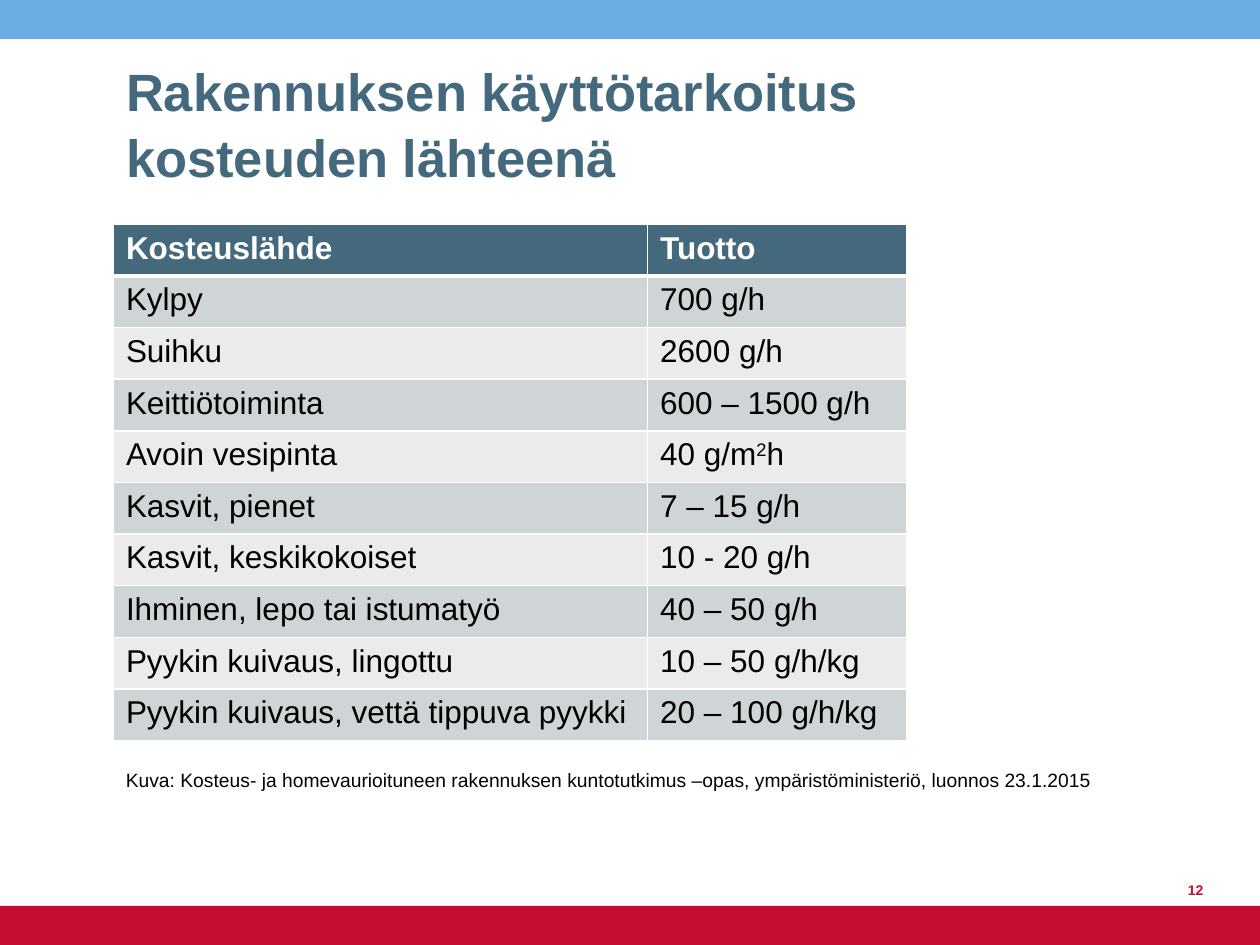
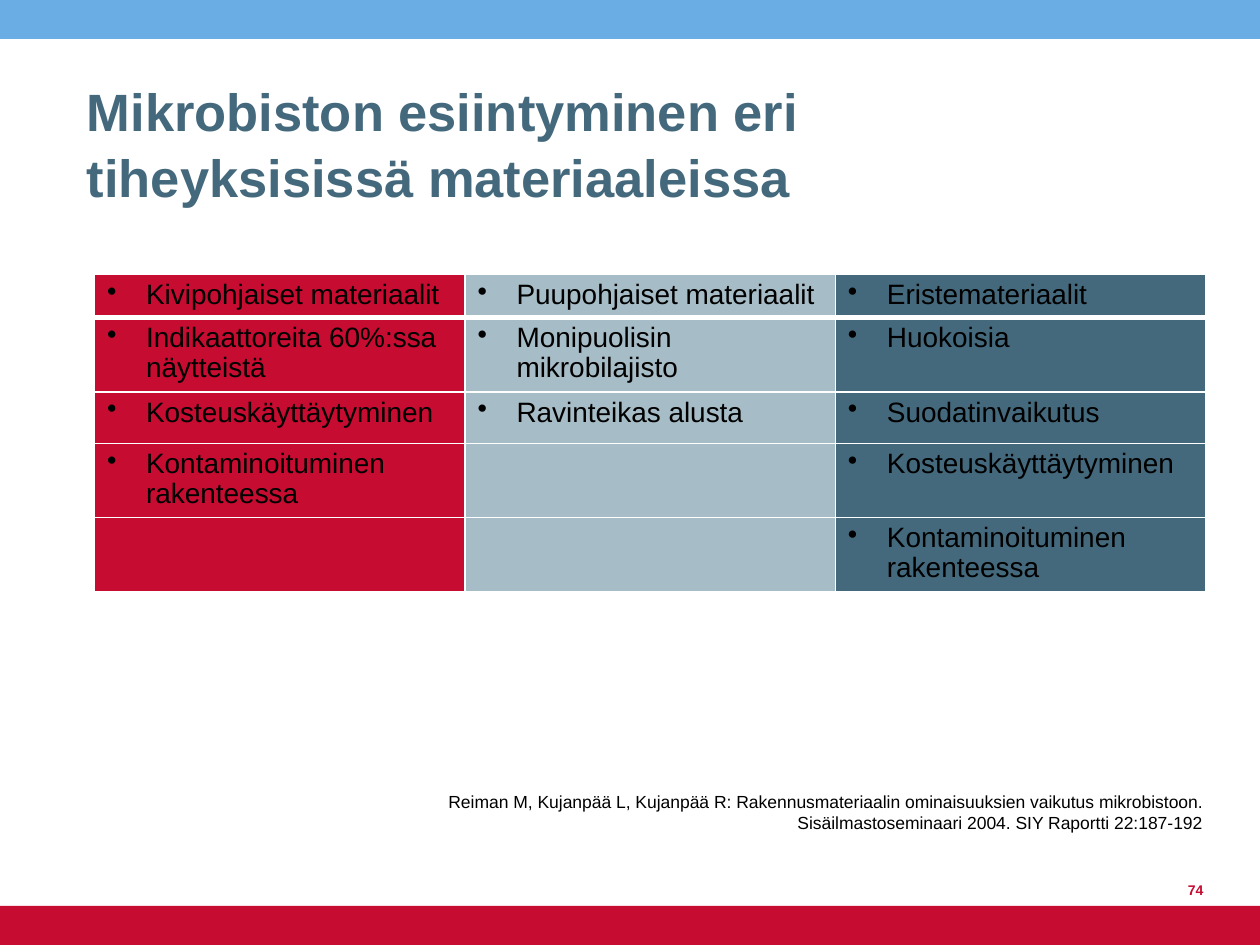
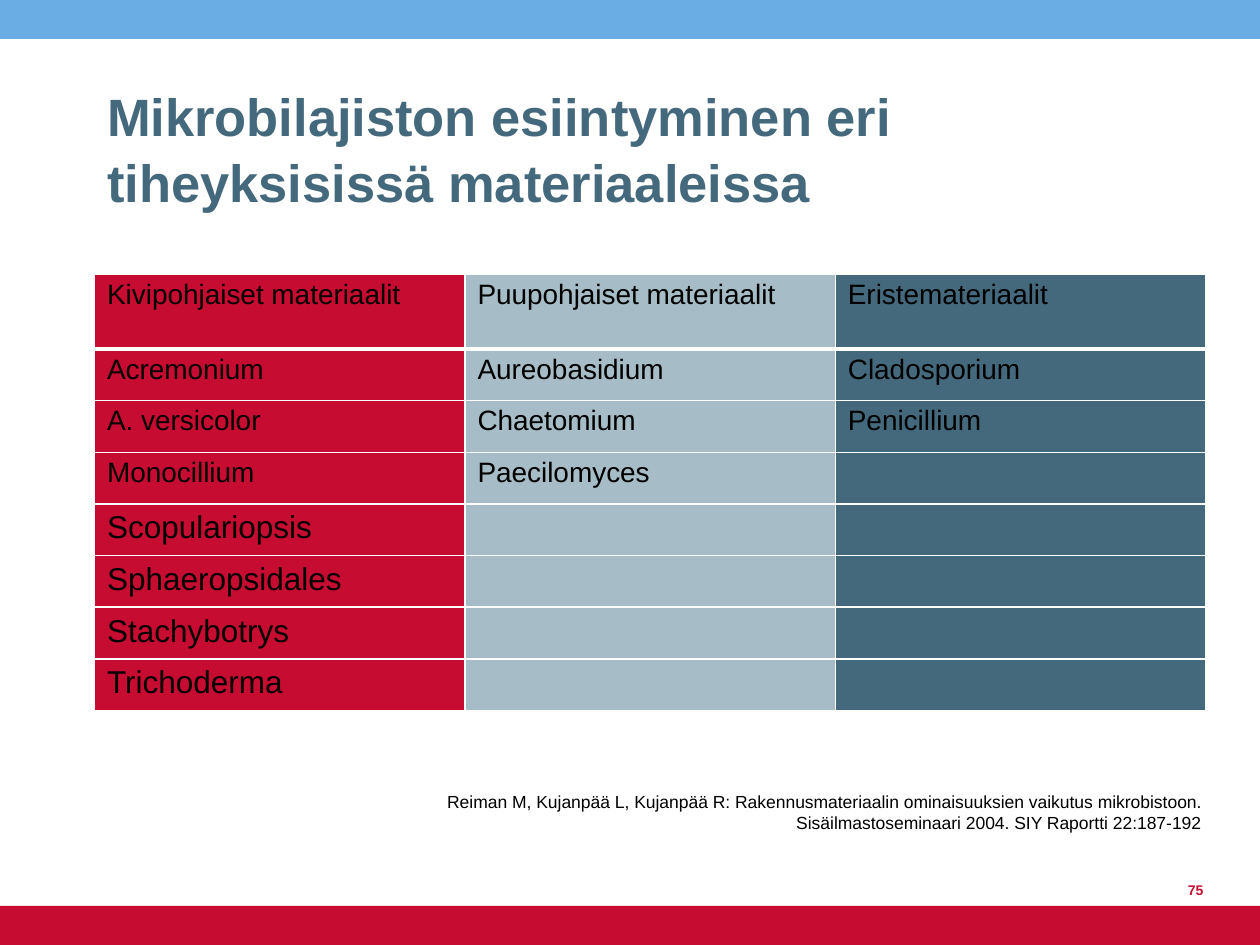
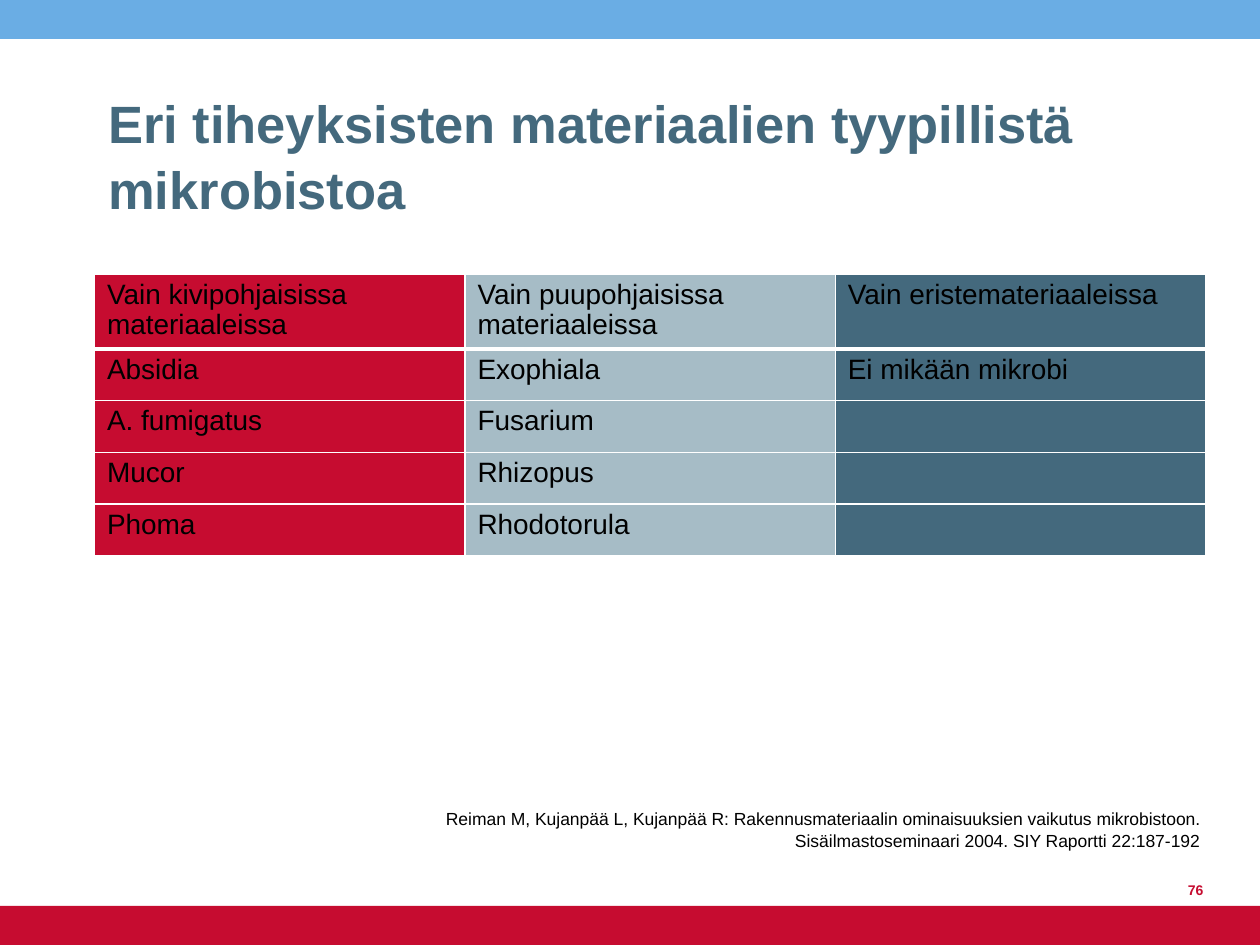
from dataclasses import dataclass

import lxml.etree
import pptx
import pptx.dml.color
import pptx.enum.shapes
import pptx.enum.text
import pptx.oxml.ns
import pptx.util

Inches = pptx.util.Inches
Pt = pptx.util.Pt
RGBColor = pptx.dml.color.RGBColor
Align = pptx.enum.text.PP_ALIGN
Anchor = pptx.enum.text.MSO_ANCHOR
qn = pptx.oxml.ns.qn

FONT = "Arial"
SKY = RGBColor(0x6A, 0xAD, 0xE4)
RED = RGBColor(0xC6, 0x0C, 0x30)
SLATE = RGBColor(0x44, 0x69, 0x7D)
MIST = RGBColor(0xA6, 0xBC, 0xC6)
ROW_DARK = RGBColor(0xCF, 0xD4, 0xD7)
ROW_LIGHT = RGBColor(0xE9, 0xEB, 0xEC)
WHITE = RGBColor(0xFF, 0xFF, 0xFF)
BLACK = RGBColor(0, 0, 0)

MATERIAL_FILLS = (RED, MIST, SLATE)
MATERIAL_WIDTHS = (2.94,) * 3
ROW = 0.41
TALL_ROW = 0.59
CITATION = (
    "Reiman M, Kujanpää L, Kujanpää R: Rakennusmateriaalin ominaisuuksien "
    "vaikutus mikrobistoon.\nSisäilmastoseminaari 2004. SIY Raportti 22:187-192"
)


@dataclass(frozen=True)
class Box:
    left: float
    top: float
    width: float
    height: float

    def lengths(self) -> tuple:
        return tuple(Inches(v) for v in (self.left, self.top, self.width, self.height))


@dataclass(frozen=True)
class Note:
    text: str
    box: Box
    size: int = 10
    align: Align = Align.RIGHT
    margin_bottom: float = 0.05


@dataclass(frozen=True)
class TableSlide:
    title: str
    title_box: Box
    page: int
    note: Note
    left: float
    top: float
    widths: tuple
    heights: tuple
    rows: tuple
    by_material: bool = True
    bullets: bool = False
    large_from: int = 99  # first row set in 18 points


SLIDES = (
    TableSlide(
        "Rakennuksen käyttötarkoitus kosteuden lähteenä",
        Box(0.9, 0.36, 8.11, 1.18), 12,
        Note("Kuva: Kosteus- ja homevaurioituneen rakennuksen kuntotutkimus –opas, "
             "ympäristöministeriö, luonnos 23.1.2015",
             Box(0.9, 6.07, 8.5, 0.39), 11, Align.LEFT, 0.18),
        0.9, 1.78, (4.24, 2.06), (ROW,) * 10,
        (
            ("Kosteuslähde", "Tuotto"),
            ("Kylpy", "700 g/h"),
            ("Suihku", "2600 g/h"),
            ("Keittiötoiminta", "600 – 1500 g/h"),
            ("Avoin vesipinta", "40 g/m^2^h"),
            ("Kasvit, pienet", "7 – 15 g/h"),
            ("Kasvit, keskikokoiset", "10 - 20 g/h"),
            ("Ihminen, lepo tai istumatyö", "40 – 50 g/h"),
            ("Pyykin kuivaus, lingottu", "10 – 50 g/h/kg"),
            ("Pyykin kuivaus, vettä tippuva pyykki", "20 – 100 g/h/kg"),
        ),
        by_material=False, large_from=0,
    ),
    TableSlide(
        "Mikrobiston esiintyminen eri\vtiheyksisissä materiaaleissa",
        Box(0.59, 0.52, 8.19, 1.18), 74,
        Note(CITATION, Box(1.11, 6.26, 8.53, 0.4)),
        0.75, 2.18, MATERIAL_WIDTHS, (0.34, TALL_ROW, ROW, TALL_ROW, TALL_ROW),
        (
            ("Kivipohjaiset materiaalit", "Puupohjaiset materiaalit", "Eristemateriaalit"),
            ("Indikaattoreita 60%:ssa näytteistä", "Monipuolisin mikrobilajisto", "Huokoisia"),
            ("Kosteuskäyttäytyminen", "Ravinteikas alusta", "Suodatinvaikutus"),
            ("Kontaminoituminen rakenteessa", "", "Kosteuskäyttäytyminen"),
            ("", "", "Kontaminoituminen rakenteessa"),
        ),
        bullets=True,
    ),
    TableSlide(
        "Mikrobilajiston esiintyminen eri tiheyksisissä materiaaleissa",
        Box(0.75, 0.56, 8.19, 1.18), 75,
        Note(CITATION, Box(1.1, 6.26, 8.53, 0.4)),
        0.75, 2.18, MATERIAL_WIDTHS, (TALL_ROW,) + (ROW,) * 7,
        (
            ("Kivipohjaiset materiaalit", "Puupohjaiset materiaalit", "Eristemateriaalit"),
            ("Acremonium", "Aureobasidium", "Cladosporium"),
            ("A. versicolor", "Chaetomium", "Penicillium"),
            ("Monocillium", "Paecilomyces", ""),
            ("Scopulariopsis", "", ""),
            ("Sphaeropsidales", "", ""),
            ("Stachybotrys", "", ""),
            ("Trichoderma", "", ""),
        ),
        large_from=4,
    ),
    TableSlide(
        "Eri tiheyksisten materiaalien tyypillistä mikrobistoa",
        Box(0.76, 0.62, 8.19, 1.18), 76,
        Note(CITATION, Box(1.09, 6.4, 8.53, 0.4)),
        0.75, 2.18, MATERIAL_WIDTHS, (TALL_ROW,) + (ROW,) * 4,
        (
            ("Vain kivipohjaisissa materiaaleissa", "Vain puupohjaisissa materiaaleissa",
             "Vain eristemateriaaleissa"),
            ("Absidia", "Exophiala", "Ei mikään mikrobi"),
            ("A. fumigatus", "Fusarium", ""),
            ("Mucor", "Rhizopus", ""),
            ("Phoma", "Rhodotorula", ""),
        ),
    ),
)


def add_bullet(paragraph) -> None:
    properties = paragraph._p.get_or_add_pPr()
    indent = Inches(0.31)
    properties.set("marL", str(indent))
    properties.set("indent", str(-indent))
    lxml.etree.SubElement(properties, qn("a:buChar")).set("char", "•")


def write(frame, text: str, *, size: int, color: RGBColor = BLACK, bold: bool = False,
          align: Align = Align.LEFT, spacing: float = 1.0, bullet: bool = False) -> None:
    """Newline parts paragraphs, vertical tab parts lines, ^...^ is superscript."""
    for index, paragraph_text in enumerate(text.split("\n")):
        paragraph = frame.add_paragraph() if index else frame.paragraphs[0]
        if bullet:
            add_bullet(paragraph)
        paragraph.alignment = align
        paragraph.line_spacing = spacing
        for line_number, line in enumerate(paragraph_text.split("\v")):
            if line_number:
                paragraph.add_line_break()
            for part_number, part in enumerate(line.split("^")):
                run = paragraph.add_run()
                run.text = part
                run.font.name = FONT
                run.font.size = Pt(size)
                run.font.bold = bold
                run.font.color.rgb = color
                if part_number % 2:
                    run.font._element.set("baseline", "30000")


def set_frame(frame, margin_bottom: float = 0.05) -> None:
    frame.word_wrap = True
    frame.auto_size = pptx.enum.text.MSO_AUTO_SIZE.NONE
    frame.vertical_anchor = Anchor.BOTTOM
    frame.margin_bottom = Inches(margin_bottom)


def add_label(slide, note: Note, **text_format) -> None:
    frame = slide.shapes.add_textbox(*note.box.lengths()).text_frame
    set_frame(frame, note.margin_bottom)
    write(frame, note.text, size=note.size, align=note.align, **text_format)


def set_title(slide, text: str, box: Box) -> None:
    title = slide.shapes.title
    title.left, title.top, title.width, title.height = box.lengths()
    set_frame(title.text_frame)
    write(title.text_frame, text, size=30, color=SLATE, bold=True, spacing=1.05)


def add_bands(slide, layout) -> None:
    """Draw the two bands and move them to the layout that all slides share."""
    for top, color in ((0, SKY), (7.19, RED)):
        band = slide.shapes.add_shape(
            pptx.enum.shapes.MSO_SHAPE.RECTANGLE, *Box(0, top, 10, 0.31).lengths())
        band.shadow.inherit = False
        band.fill.solid()
        band.fill.fore_color.rgb = color
        band.line.fill.background()
        layout.shapes._spTree.insert(2, band._element)


def set_borders(cell, row: int) -> None:
    properties = cell._tc.get_or_add_tcPr()
    widths = {"lnL": 1, "lnR": 1, "lnT": 3 if row == 1 else 1, "lnB": 3 if row == 0 else 1}
    for side, width in widths.items():
        line = lxml.etree.SubElement(properties, qn(f"a:{side}"), w=str(Pt(width)))
        fill = lxml.etree.SubElement(line, qn("a:solidFill"))
        lxml.etree.SubElement(fill, qn("a:srgbClr"), val=str(WHITE))


def cell_fill(content: TableSlide, row: int, column: int) -> RGBColor:
    if content.by_material:
        return MATERIAL_FILLS[column]
    if row == 0:
        return SLATE
    return ROW_DARK if row % 2 else ROW_LIGHT


def add_content_table(slide, content: TableSlide) -> None:
    area = Box(content.left, content.top, sum(content.widths), sum(content.heights))
    table = slide.shapes.add_table(
        len(content.rows), len(content.widths), *area.lengths()).table
    for column, width in zip(table.columns, content.widths):
        column.width = Inches(width)
    for row, height in zip(table.rows, content.heights):
        row.height = Inches(height)
    for row, texts in enumerate(content.rows):
        large = row >= content.large_from
        strong = row == 0 and not content.by_material
        for column, text in enumerate(texts):
            cell = table.cell(row, column)
            set_borders(cell, row)
            cell.fill.solid()
            cell.fill.fore_color.rgb = cell_fill(content, row, column)
            if text:
                write(cell.text_frame, text, size=18 if large else 16, bold=strong,
                      color=WHITE if strong else BLACK, bullet=content.bullets,
                      spacing=1.0 if large else 0.96)


def main() -> None:
    deck = pptx.Presentation()
    deck.slide_width, deck.slide_height = Inches(10), Inches(7.5)
    title_only = deck.slide_layouts[5]
    for number, content in enumerate(SLIDES):
        slide = deck.slides.add_slide(title_only)
        if number == 0:
            add_bands(slide, title_only)
        set_title(slide, content.title, content.title_box)
        add_content_table(slide, content)
        add_label(slide, content.note)
        page = Note(str(content.page), Box(9.1, 6.78, 0.55, 0.4), 8)
        add_label(slide, page, color=RED, bold=True)
    deck.save("out.pptx")


if __name__ == "__main__":
    main()
